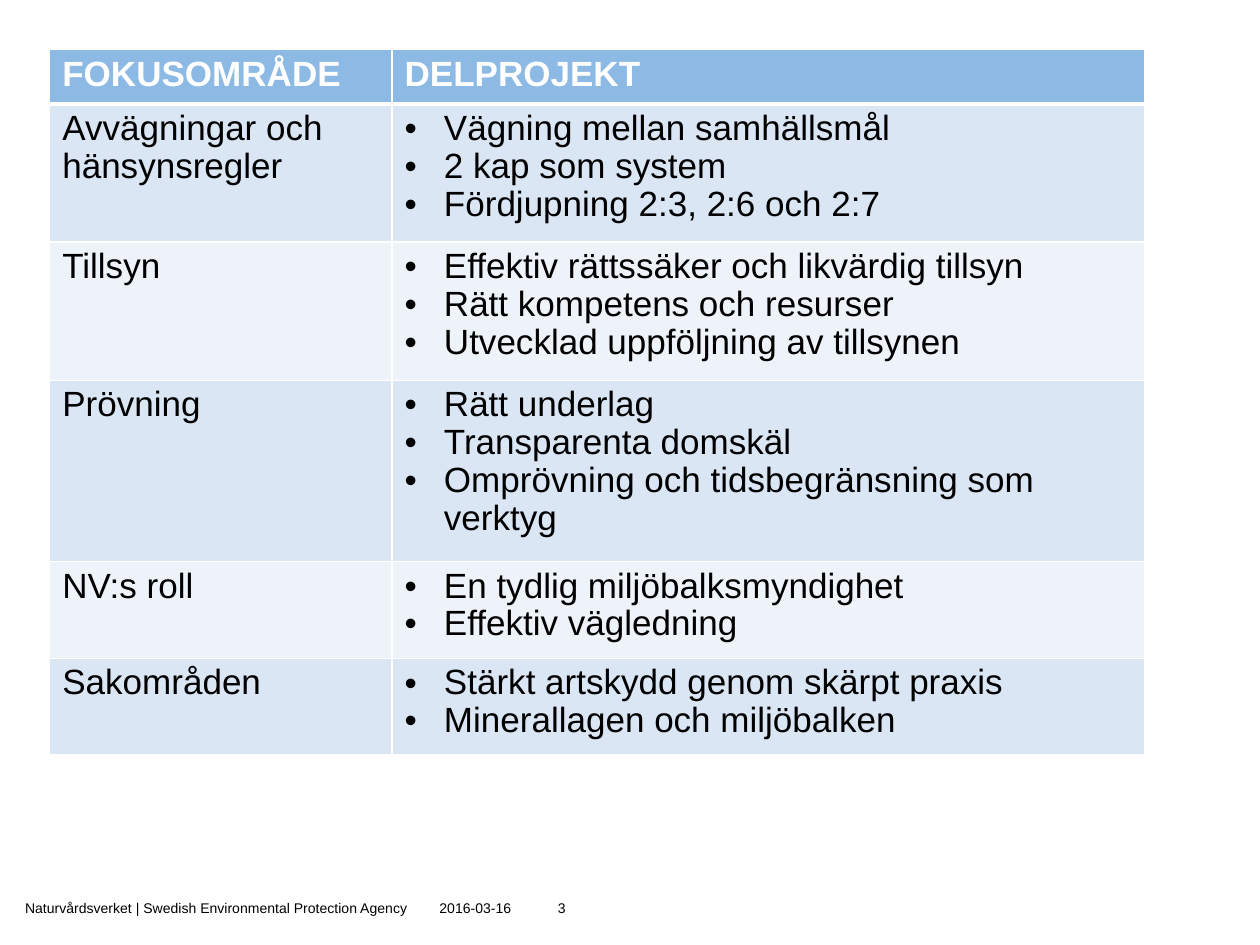
from lxml.etree import SubElement
from pptx import Presentation
from pptx.dml.color import RGBColor
from pptx.enum.text import MSO_ANCHOR, PP_ALIGN
from pptx.oxml.ns import qn
from pptx.util import Pt

WHITE = RGBColor(0xFF, 0xFF, 0xFF)
BLACK = RGBColor(0x00, 0x00, 0x00)
HEADER_BLUE = RGBColor(0x8D, 0xB9, 0xE5)
BAND_DARK = RGBColor(0xDB, 0xE6, 0xF5)
BAND_LIGHT = RGBColor(0xEE, 0xF3, 0xFA)

HEADINGS = ("FOKUSOMRÅDE", "DELPROJEKT")
FOCUS_AREAS = [
    ("Avvägningar och hänsynsregler", 79,
     ["Vägning mellan samhällsmål", "2 kap som system",
      "Fördjupning 2:3, 2:6 och 2:7"]),
    ("Tillsyn", 79,
     ["Effektiv rättssäker och likvärdig tillsyn",
      "Rätt kompetens och resurser", "Utvecklad uppföljning av tillsynen"]),
    ("Prövning", 103.5,
     ["Rätt underlag", "Transparenta domskäl",
      "Omprövning och tidsbegränsning som verktyg"]),
    ("NV:s roll", 55.4,
     ["En tydlig miljöbalksmyndighet", "Effektiv vägledning"]),
    ("Sakområden", 55,
     ["Stärkt artskydd genom skärpt praxis", "Minerallagen och miljöbalken"]),
]


class SlideBuilder:
    font_name = "Arial"
    table_size = 20
    footer_size = 8
    line_spacing = 0.97
    bullet_indent = 22.5

    def __init__(self, slide):
        self.slide = slide

    def style(self, paragraph, size, color, bold=False):
        font = paragraph.font
        font.name = self.font_name
        font.size = Pt(size)
        font.bold = bold
        font.color.rgb = color

    def bullet(self, paragraph):
        properties = paragraph._p.get_or_add_pPr()
        properties.set("marL", str(Pt(self.bullet_indent)))
        properties.set("indent", str(-Pt(self.bullet_indent)))
        SubElement(properties, qn("a:buFont"), typeface=self.font_name)
        SubElement(properties, qn("a:buChar"), char="•")

    def borders(self, cell, top, bottom):
        properties = cell._tc.get_or_add_tcPr()
        widths = (("a:lnL", 1), ("a:lnR", 1), ("a:lnT", top), ("a:lnB", bottom))
        for position, (side, width) in enumerate(widths):
            line = SubElement(properties, qn(side), w=str(Pt(width)))
            fill = SubElement(line, qn("a:solidFill"))
            SubElement(fill, qn("a:srgbClr"), val=str(WHITE))
            properties.insert(position, line)

    def cell(self, cell, lines, fill, color=BLACK, bold=False, bulleted=False,
             top=1, bottom=1):
        cell.fill.solid()
        cell.fill.fore_color.rgb = fill
        self.borders(cell, top, bottom)
        frame = cell.text_frame
        frame.text = "\n".join(lines)
        for paragraph in frame.paragraphs:
            if bulleted:
                self.bullet(paragraph)
            paragraph.line_spacing = self.line_spacing
            self.style(paragraph, self.table_size, color, bold)

    def table(self, left, top, widths, header_height, headings, areas):
        heights = [header_height] + [height for _, height, _ in areas]
        table = self.slide.shapes.add_table(
            len(heights), len(widths), Pt(left), Pt(top),
            Pt(sum(widths)), Pt(sum(heights))).table
        for column, width in zip(table.columns, widths):
            column.width = Pt(width)
        for row, height in zip(table.rows, heights):
            row.height = Pt(height)
        for column, heading in enumerate(headings):
            self.cell(table.cell(0, column), [heading], HEADER_BLUE, WHITE,
                      bold=True, bottom=3)
        for row, (area, _, projects) in enumerate(areas, start=1):
            band = BAND_DARK if row % 2 else BAND_LIGHT
            top_border = 3 if row == 1 else 1
            self.cell(table.cell(row, 0), [area], band, top=top_border)
            self.cell(table.cell(row, 1), projects, band, bulleted=True,
                      top=top_border)

    def footer(self, text, left, width, align=PP_ALIGN.LEFT):
        frame = self.slide.shapes.add_textbox(
            Pt(left), Pt(509), Pt(width), Pt(20)).text_frame
        frame.word_wrap = True
        frame.vertical_anchor = MSO_ANCHOR.MIDDLE
        paragraph = frame.paragraphs[0]
        paragraph.text = text
        paragraph.alignment = align
        self.style(paragraph, self.footer_size, BLACK)


def main():
    presentation = Presentation()
    presentation.slide_width = Pt(720)
    presentation.slide_height = Pt(540)
    builder = SlideBuilder(
        presentation.slides.add_slide(presentation.slide_layouts[6]))
    builder.table(28.4, 28.4, (195.6, 430.4), 31, HEADINGS, FOCUS_AREAS)
    builder.footer("2016-03-16", 244, 59)
    builder.footer("Naturvårdsverket | Swedish Environmental Protection Agency",
                   7.2, 239)
    builder.footer("3", 302.4, 28, PP_ALIGN.RIGHT)
    presentation.save("out.pptx")


if __name__ == "__main__":
    main()
